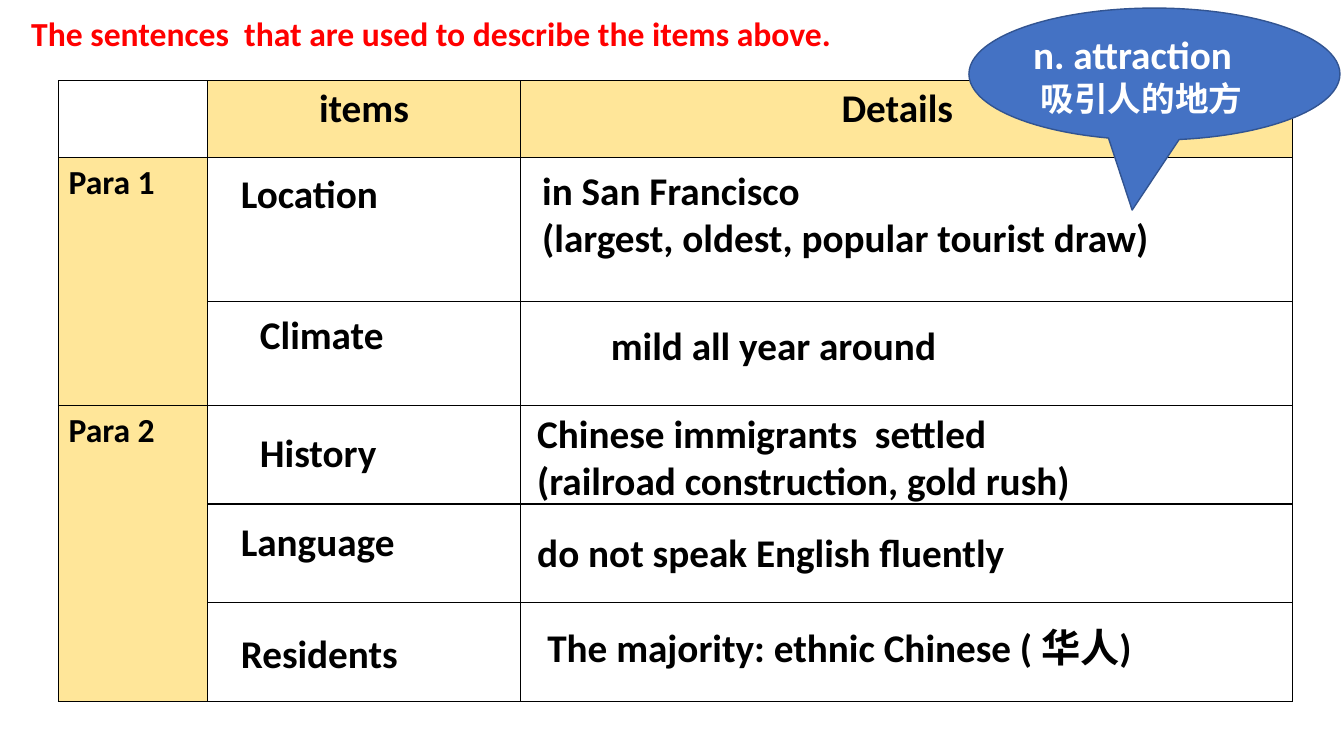
from itertools import accumulate

from lxml import etree
from pptx import Presentation
from pptx.dml.color import RGBColor
from pptx.enum.shapes import MSO_SHAPE
from pptx.enum.text import MSO_ANCHOR, MSO_AUTO_SIZE, PP_ALIGN
from pptx.oxml.ns import qn
from pptx.util import Inches, Pt

RED = RGBColor(0xFF, 0x00, 0x00)
BLACK = RGBColor(0x00, 0x00, 0x00)
WHITE = RGBColor(0xFF, 0xFF, 0xFF)
CREAM = RGBColor(0xFF, 0xE6, 0x99)
BLUE = RGBColor(0x44, 0x72, 0xC4)
DARK_BLUE = RGBColor(0x32, 0x54, 0x91)

CALLOUT = MSO_SHAPE.OVAL_CALLOUT
TOP, MIDDLE = MSO_ANCHOR.TOP, MSO_ANCHOR.MIDDLE
LEFT, CENTER = PP_ALIGN.LEFT, PP_ALIGN.CENTER
GROW = MSO_AUTO_SIZE.SHAPE_TO_FIT_TEXT

LATIN_FONT = "Calibri"
CHINESE_FONT = "Noto Sans CJK SC"

TABLE_BOX = (0.58, 0.8, 12.24, 6.16)
COLUMNS = [1.48, 3.1, 7.66]
ROWS = [0.76, 1.43, 1.03, 0.98, 0.98, 0.98]

# Per table row: item, its offset in the cell, detail lines, their offset, box width
ENTRIES = [
    ("Location", (0.23, 0.07),
     "in San Francisco\n(largest, oldest, popular tourist draw)", (0.12, 0.04), 7.4),
    ("Climate", (0.42, 0.04), "mild all year around", (0.8, 0.15), 4.45),
    ("History", (0.42, 0.18),
     "Chinese immigrants  settled\n(railroad construction, gold rush)", (0.07, -0.01), 7.32),
    ("Language", (0.23, 0.08), "do not speak English fluently", (0.07, 0.19), 7.32),
    ("Residents", (0.23, 0.21), ("The majority: ethnic Chinese ( ", "华人", ")"),
     (0.17, 0.15), 7.32),
]


def format_run(run, size, color):
    run.font.name = LATIN_FONT
    run.font.size = Pt(size)
    run.font.bold = True
    run.font.color.rgb = color
    if not run.text.isascii():
        east_asian = etree.SubElement(run.font._element, qn("a:ea"))
        east_asian.set("typeface", CHINESE_FONT)


def write_text(text_frame, text, size, color=BLACK, align=LEFT):
    """Fill a frame with lines of text, or with one line given as several runs."""
    if isinstance(text, tuple):
        for part in text:
            text_frame.paragraphs[0].add_run().text = part
    else:
        text_frame.text = text
    for paragraph in text_frame.paragraphs:
        paragraph.alignment = align
        for run in paragraph.runs:
            format_run(run, size, color)


def place_title(slide, box):
    title = slide.shapes.title
    title.left, title.top, title.width, title.height = map(Inches, box)
    text_frame = title.text_frame
    text_frame.word_wrap = True
    text_frame.auto_size = GROW
    text_frame.vertical_anchor = TOP
    write_text(text_frame, "The sentences  that are used to describe the items above.", 24, RED)


def set_borders(cell):
    properties = cell._tc.get_or_add_tcPr()
    for side in ("a:lnL", "a:lnR", "a:lnT", "a:lnB"):
        line = etree.SubElement(properties, qn(side), w=str(Pt(1)))
        fill = etree.SubElement(line, qn("a:solidFill"))
        etree.SubElement(fill, qn("a:srgbClr"), val=str(BLACK))


def add_grid(slide, box):
    """Draw the table with its headings and paragraph labels."""
    table = slide.shapes.add_table(len(ROWS), len(COLUMNS), *map(Inches, box)).table
    table.first_row = table.horz_banding = False
    for column, width in zip(table.columns, COLUMNS):
        column.width = Inches(width)
    for row, height in zip(table.rows, ROWS):
        row.height = Inches(height)
    for cell in table.iter_cells():
        set_borders(cell)
        cell.fill.background()

    table.cell(1, 0).merge(table.cell(2, 0))
    table.cell(3, 0).merge(table.cell(5, 0))
    headings = [(0, 1, "items", 28, CENTER), (0, 2, "Details", 28, CENTER),
                (1, 0, "Para 1", 24, LEFT), (3, 0, "Para 2", 24, LEFT)]
    for row, column, text, size, align in headings:
        cell = table.cell(row, column)
        cell.fill.solid()
        cell.fill.fore_color.rgb = CREAM
        write_text(cell.text_frame, text, size, align=align)
    table.cell(0, 2).margin_right = Inches(0.28)


def add_note(slide, cell_corner, offset, width, text):
    left, top = (corner + shift for corner, shift in zip(cell_corner, offset))
    height = 1.04 if "\n" in text else 0.57
    text_box = slide.shapes.add_textbox(*map(Inches, (left, top, width, height)))
    text_box.text_frame.word_wrap = True
    text_box.text_frame.auto_size = GROW
    write_text(text_box.text_frame, text, 28)


def add_entries(slide, box):
    """Lay the items and details over the cells of the table in the box."""
    _, item_left, detail_left = accumulate(COLUMNS[:-1], initial=box[0])
    row_tops = list(accumulate(ROWS[:-1], initial=box[1]))[1:]
    for row_top, entry in zip(row_tops, ENTRIES):
        item, item_offset, detail, detail_offset, detail_width = entry
        add_note(slide, (item_left, row_top), item_offset, 2.48, item)
        add_note(slide, (detail_left, row_top), detail_offset, detail_width, detail)


def add_callout(slide, box):
    callout = slide.shapes.add_shape(CALLOUT, *map(Inches, box))
    callout.adjustments[0] = -0.06
    callout.adjustments[1] = 1.03
    callout.shadow.inherit = False
    callout.fill.solid()
    callout.fill.fore_color.rgb = BLUE
    callout.line.color.rgb = DARK_BLUE
    callout.line.width = Pt(1)
    text_frame = callout.text_frame
    text_frame.word_wrap = True
    text_frame.vertical_anchor = MIDDLE
    write_text(text_frame, "n. attraction\n 吸引人的地方", 28, WHITE)
    text_frame.paragraphs[1].runs[0].font.size = Pt(24)


def main():
    presentation = Presentation()
    presentation.slide_width = Inches(13.33)
    presentation.slide_height = Inches(7.5)
    slide = presentation.slides.add_slide(presentation.slide_layouts.get_by_name("Title Only"))
    place_title(slide, (0.21, 0.08, 10.34, 0.5))
    add_grid(slide, TABLE_BOX)
    add_entries(slide, TABLE_BOX)
    add_callout(slide, (9.61, 0.08, 3.68, 1.31))
    presentation.save("out.pptx")


if __name__ == "__main__":
    main()
